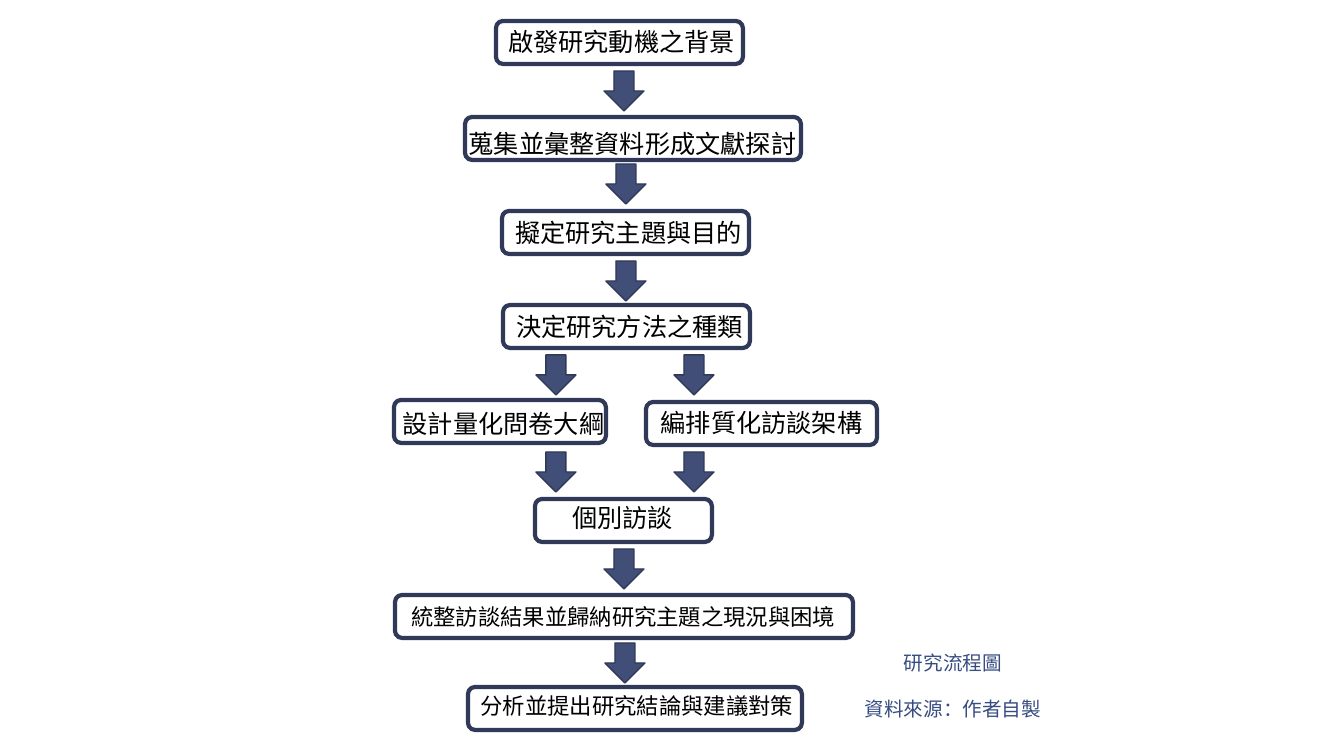
"""Builds the research process flowchart slide."""
from lxml import etree
from pptx import Presentation
from pptx.dml.color import RGBColor
from pptx.enum.shapes import MSO_SHAPE
from pptx.enum.text import MSO_ANCHOR, PP_ALIGN
from pptx.oxml.ns import qn
from pptx.util import Pt

ROUNDED = MSO_SHAPE.ROUNDED_RECTANGLE
DOWN_ARROW = MSO_SHAPE.DOWN_ARROW
TOP = MSO_ANCHOR.TOP
CENTER = PP_ALIGN.CENTER

EMU_PER_PX = 914400 / 100.8
COLORS = {"outline": "303A58", "arrow": "414E77", "text": "000000", "caption": "374C81"}
STEP_FONT = "Noto Sans CJK TC"
CAPTION_FONT = "Noto Sans CJK SC"
STEP_HEIGHT = 43
ARROW_SIZE = 40

STEPS = [
    ("啟發研究動機之背景", 18, (496, 21, 247), (496, 21, 251, 40)),
    ("蒐集並彙整資料形成文獻探討", 18, (465, 117, 336), (450, 123, 365, 33)),
    ("擬定研究主題與目的", 18, (502, 211, 247), (499, 212, 259, 24)),
    ("決定研究方法之種類", 18, (503, 305, 247), (499, 306, 261, 40)),
    ("設計量化問卷大綱", 18, (394, 400, 212), (383, 403, 241, 30)),
    ("編排質化訪談架構", 18, (646, 402, 231), (646, 402, 231, 32)),
    ("個別訪談", 18, (535, 499, 177), (535, 497, 175, 32)),
    ("統整訪談結果並歸納研究主題之現況與困境", 16, (395, 595, 458), (370, 598, 507, 26)),
    ("分析並提出研究結論與建議對策", 16, (468, 687, 334), (436, 687, 402, 32)),
]
ARROWS = [
    (604, 71), (606, 164), (606, 261),
    (536, 355), (674, 355), (536, 452), (674, 452),
    (604, 549), (605, 643),
]
CAPTION = ["研究流程圖", "資料來源：作者自製"]


def px(*lengths):
    return [round(length * EMU_PER_PX) for length in lengths]


def rgb(name):
    return RGBColor.from_string(COLORS[name])


class Flowchart:
    """Draws the elements of the flowchart on one slide."""

    def __init__(self, slide):
        self.shapes = slide.shapes

    def outlined(self, kind, frame, line_width):
        shape = self.shapes.add_shape(kind, *px(*frame))
        shape.shadow.inherit = False
        shape.line.color.rgb = rgb("outline")
        shape.line.width = Pt(line_width)
        return shape

    def arrow(self, left, top):
        arrow = self.outlined(DOWN_ARROW, (left, top, ARROW_SIZE, ARROW_SIZE), 1)
        arrow.fill.solid()
        arrow.fill.fore_color.rgb = rgb("arrow")

    def step(self, wording, size, box, label):
        self.outlined(ROUNDED, (*box, STEP_HEIGHT), 3).fill.background()
        self.text(label, [wording], size, STEP_FONT, "text")

    def text(self, frame, lines, size, typeface, color):
        text_frame = self.shapes.add_textbox(*px(*frame)).text_frame
        text_frame.word_wrap = True
        text_frame.vertical_anchor = TOP
        text_frame.text = "\n".join(lines)
        for paragraph in text_frame.paragraphs:
            paragraph.alignment = CENTER
            font = paragraph.font
            font.size = Pt(size)
            font.color.rgb = rgb(color)
            font.name = typeface
            properties = paragraph._p.get_or_add_pPr().find(qn("a:defRPr"))
            etree.SubElement(properties, qn("a:ea"), typeface=typeface)
        return text_frame.paragraphs

    def caption(self, frame, lines):
        paragraphs = self.text(frame, lines, 14, CAPTION_FONT, "caption")
        for paragraph in paragraphs:
            paragraph.line_spacing = 0.85
            paragraph.space_after = Pt(9)
            paragraph._p.get_or_add_pPr().set("indent", str(px(27)[0]))
        for paragraph in paragraphs[1:]:
            paragraph.space_before = Pt(9)


def main():
    presentation = Presentation()
    presentation.slide_width, presentation.slide_height = px(1344, 756)
    chart = Flowchart(presentation.slides.add_slide(presentation.slide_layouts[6]))
    for step in STEPS:
        chart.step(*step)
    for position in ARROWS:
        chart.arrow(*position)
    chart.caption((604, 650, 671, 83), CAPTION)
    presentation.save("out.pptx")


if __name__ == "__main__":
    main()
